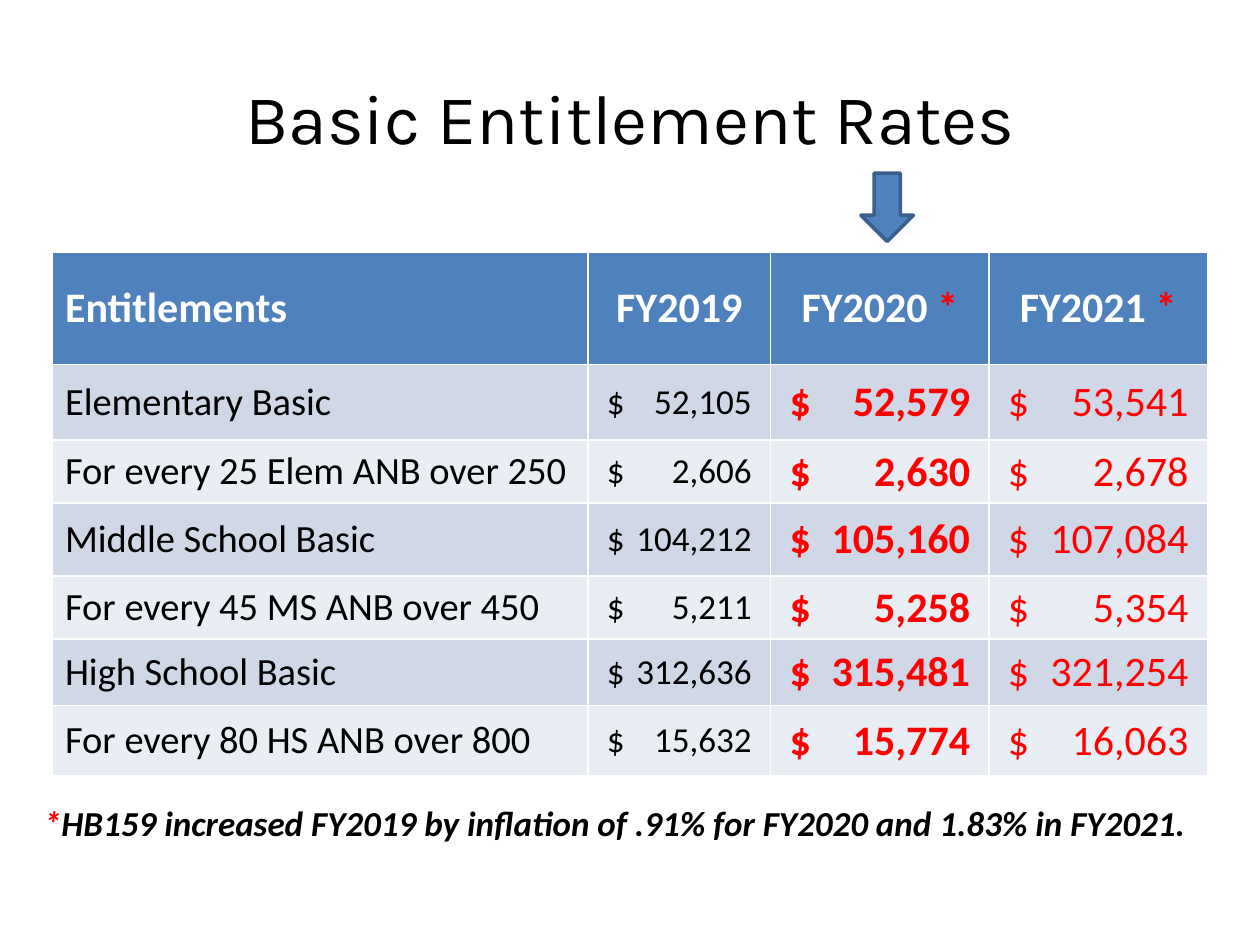
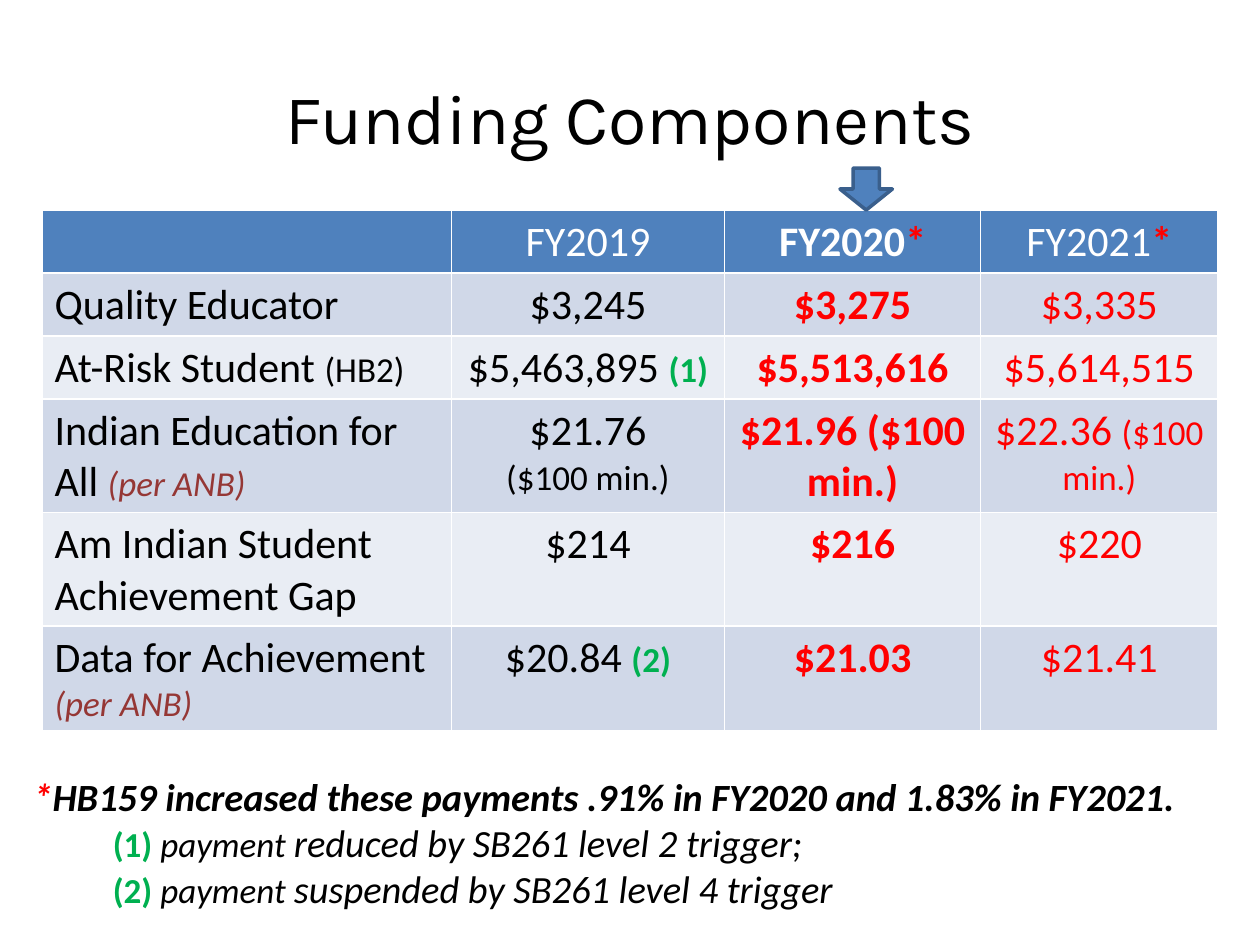
from lxml.etree import Element
from pptx import Presentation
from pptx.dml.color import RGBColor
from pptx.enum.shapes import MSO_SHAPE
from pptx.enum.text import MSO_ANCHOR, PP_ALIGN
from pptx.oxml.ns import qn
from pptx.util import Inches, Pt

WIDE, HIGH = 10, 7.5
COLS, ROWS = 12, 18
BLUE, EDGE, BANDS = "4F81BD", "3A5F8C", ("D0D8E8", "E9EDF4")
BLACK, WHITE, RED, GREEN, BROWN = "000000", "FFFFFF", "FF0000", "00B050", "953735"
SMALL = {"size": 20}
STAR = ("*", {"hue": RED, "bold": True})
PER_ANB = ("(per ANB)", {"size": 20, "hue": BROWN, "italic": True})
PAD = 0.15


def tint(code):
    return RGBColor.from_string(code)


def mark(num):
    return f"({num})", {"size": 20, "hue": GREEN, "bold": True, "italic": False}


def style(font, size=None, hue=None, bold=None, italic=None, name=None):
    if size:
        font.size = Pt(size)
    if hue:
        font.color.rgb = tint(hue)
    if bold is not None:
        font.bold = bold
    if italic is not None:
        font.italic = italic
    if name:
        font.name = name


class Deck:
    """Holds the shared style and the slide being filled."""

    def __init__(self):
        self.show = Presentation()
        self.show.slide_width, self.show.slide_height = Inches(WIDE), Inches(HIGH)
        self.slide = None

    def across(self, cols):
        return Inches(cols * WIDE / COLS)

    def down(self, rows):
        return Inches(rows * HIGH / ROWS)

    def place(self, left, top, cols, rows):
        return self.across(left), self.down(top), self.across(cols), self.down(rows)

    def put(self, frame, lines, look, align=PP_ALIGN.LEFT):
        for num, line in enumerate(lines):
            para = frame.add_paragraph() if num else frame.paragraphs[0]
            para.alignment = align
            style(para.font, **{"name": "Calibri", **look})
            for piece in [line] if isinstance(line, str) else line:
                text, own = (piece, {}) if isinstance(piece, str) else piece
                run = para.add_run()
                run.text = text
                style(run.font, **own)

    def box(self, at, lines, look, align=PP_ALIGN.LEFT, anchor=MSO_ANCHOR.TOP):
        frame = self.slide.shapes.add_textbox(*self.place(*at)).text_frame
        frame.word_wrap = True
        frame.vertical_anchor = anchor
        self.put(frame, lines, look, align)
        return frame

    def page(self, title):
        self.slide = self.show.slides.add_slide(self.show.slide_layouts[6])
        look = {"size": 40, "hue": BLACK, "name": "Karla"}
        self.box((0.6, 0.72, 10.8, 3), [title], look, PP_ALIGN.CENTER, MSO_ANCHOR.MIDDLE)

    def note(self, at, lines, size):
        look = {"size": size, "hue": BLACK, "italic": True}
        frame = self.box(at, lines, look)
        for para in frame.paragraphs[1:]:
            para._p.get_or_add_pPr().set("marL", str(Inches(0.63)))

    def arrow(self, at):
        shape = self.slide.shapes.add_shape(MSO_SHAPE.DOWN_ARROW, *self.place(*at))
        shape.shadow.inherit = False
        shape.fill.solid()
        shape.fill.fore_color.rgb = tint(BLUE)
        shape.line.color.rgb = tint(EDGE)
        shape.line.width = Pt(2)

    def money(self, cell, width):
        cell.margin_left = Inches(PAD)
        para = cell.text_frame.paragraphs[0]
        para.alignment = PP_ALIGN.LEFT
        tabs = Element(qn("a:tabLst"))
        stop = Element(qn("a:tab"), pos=str(width - Inches(2 * PAD)), algn="r")
        tabs.append(stop)
        para._p.get_or_add_pPr().insert(0, tabs)

    def table(self, left, top, cols, rows, cells, heads, looks, anchor):
        spot = self.place(left, top, sum(cols), sum(rows))
        grid = self.slide.shapes.add_table(len(rows), len(cols), *spot).table
        for col, size in zip(grid.columns, cols):
            col.width = self.across(size)
        for row, size in zip(grid.rows, rows):
            row.height = self.down(size)
        for r, line in enumerate(cells):
            for c, text in enumerate(line):
                cell = grid.cell(r, c)
                cell.vertical_anchor = anchor
                cell.fill.solid()
                cell.fill.fore_color.rgb = tint(BANDS[(r - 1) % 2] if r else BLUE)
                look = looks[c] if r else {"size": 24, "hue": WHITE, "bold": heads[c]}
                lines = [text] if isinstance(text, str) else text
                align = PP_ALIGN.CENTER if c else PP_ALIGN.LEFT
                self.put(cell.text_frame, lines, look, align)
                if "\t" in text:
                    self.money(cell, grid.columns[c].width)


def looks(label, first):
    return [
        {"size": label, "hue": BLACK, "bold": False},
        {"size": first, "hue": BLACK, "bold": False},
        {"size": 24, "hue": RED, "bold": True},
        {"size": 24, "hue": RED, "bold": False},
    ]


def rates(deck):
    deck.page("Basic Entitlement Rates")
    data = [
        ("Elementary Basic", "52,105", "52,579", "53,541"),
        ("For every 25 Elem ANB over 250", "2,606", "2,630", "2,678"),
        ("Middle School Basic", "104,212", "105,160", "107,084"),
        ("For every 45 MS ANB over 450", "5,211", "5,258", "5,354"),
        ("High School Basic", "312,636", "315,481", "321,254"),
        ("For every 80 HS ANB over 800", "15,632", "15,774", "16,063"),
    ]
    cells = [["Entitlements", "FY2019", [["FY2020 ", STAR]], [["FY2021 ", STAR]]]]
    for label, *sums in data:
        cells.append([label] + ["$\t" + num for num in sums])
    deck.table(0.5, 4.8, [5.1, 1.74, 2.08, 2.08],
               [2.14, 1.44, 1.2, 1.39, 1.2, 1.27, 1.34],
               cells, [True] * 4, looks(22, 20), MSO_ANCHOR.MIDDLE)
    text = "HB159 increased FY2019 by inflation of .91% for FY2020 and 1.83% in FY2021."
    deck.note((0.3, 15.14, 11.2, 1.05), [[STAR, (text, {"bold": True})]], 20)
    deck.arrow((8.2, 3.3, 0.5, 1.3))


def funds(deck):
    deck.page("Funding Components")
    least = ("($100 min.)", SMALL)
    cells = [
        ["", "FY2019", [["FY2020", STAR]], [["FY2021", STAR]]],
        ["Quality Educator", "$3,245", "$3,275", "$3,335"],
        [[["At-Risk Student ", ("(HB2)", SMALL)]], [["$5,463,895 ", mark(1)]],
         "$5,513,616", "$5,614,515"],
        [[["Indian Education for All ", PER_ANB]], ["$21.76", [least]],
         "$21.96 ($100 min.)", [["$22.36 ", least]]],
        ["Am Indian Student Achievement Gap", "$214", "$216", "$220"],
        [[["Data for Achievement ", PER_ANB]], [["$20.84 ", mark(2)]],
         "$21.03", "$21.41"],
    ]
    deck.table(0.4, 4, [3.9, 2.6, 2.44, 2.26], [1] * 6, cells,
               [False, False, True, False], looks(24, 24), MSO_ANCHOR.TOP)
    deck.arrow((8, 3.2, 0.5, 0.8))
    text = "HB159 increased these payments .91% in FY2020 and 1.83% in FY2021."
    lines = [[STAR, (text, {"bold": True})]]
    for num, end in enumerate(("reduced by SB261 level 2 trigger;",
                               "suspended by SB261 level 4 trigger"), 1):
        lines.append([mark(num), (" payment ", SMALL), end])
    deck.note((0.2, 14.6, 11.6, 2.9), lines, 22)


def main():
    deck = Deck()
    rates(deck)
    funds(deck)
    deck.show.save("out.pptx")


if __name__ == "__main__":
    main()
